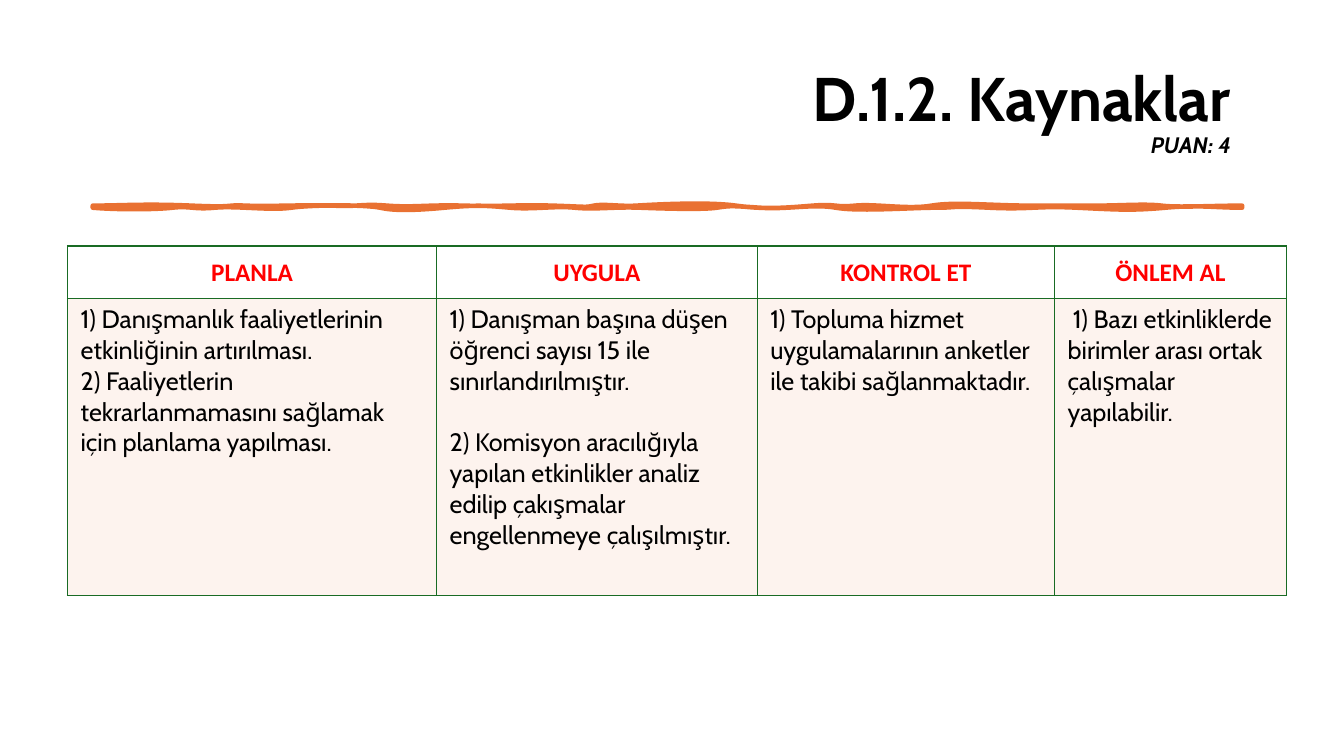
from lxml import etree
from pptx import Presentation
from pptx.dml.color import RGBColor
from pptx.enum.text import MSO_ANCHOR, MSO_AUTO_SIZE, PP_ALIGN
from pptx.oxml.ns import qn
from pptx.util import Inches, Pt

RIGHT, CENTER, LEFT = PP_ALIGN.RIGHT, PP_ALIGN.CENTER, PP_ALIGN.LEFT
MIDDLE, TOP = MSO_ANCHOR.MIDDLE, MSO_ANCHOR.TOP
NO_AUTOFIT = MSO_AUTO_SIZE.NONE
TITLE_ONLY = 5

BLACK, RED, GREEN, ORANGE, PEACH = "000000", "FF0000", "196B24", "E97132", "F6C6AD"
PEACH_OPACITY = 20

TITLE, SCORE = "D.1.2. Kaynaklar", "PUAN: 4"

# Heading, column width, paragraphs, space between paragraphs (pt), first-line indent (in)
COLUMNS = [
    ("PLANLA", 3.66, [
        "1) Danışmanlık faaliyetlerinin etkinliğinin artırılması.",
        "2) Faaliyetlerin tekrarlanmamasını sağlamak için planlama yapılması.",
    ], 0, 0),
    ("UYGULA", 3.18, [
        "1) Danışman başına düşen öğrenci sayısı 15 ile sınırlandırılmıştır.",
        "2) Komisyon aracılığıyla yapılan etkinlikler analiz edilip çakışmalar "
        "engellenmeye çalışılmıştır.",
    ], 22, 0),
    ("KONTROL ET", 2.95, [
        "1) Topluma hizmet uygulamalarının anketler ile takibi sağlanmaktadır.",
    ], 0, 0),
    ("ÖNLEM AL", 2.3, [
        "1) Bazı etkinliklerde birimler arası ortak çalışmalar yapılabilir.",
    ], 0, 0.05),
]
ROW_HEIGHTS = [0.52, 2.95]

# Brush stroke edges: two control points and an end x per curve
STROKE_LEFT, STROKE_RIGHT, UPPER_Y, LOWER_Y = 0.92, 12.32, 2.04, 2.06
UPPER_EDGE = [
    (1.19, 2.04, 1.44, 2.02, 1.9), (2.37, 2.06, 2.2, 2.03, 2.44),
    (2.67, 2.05, 3.03, 2.03, 3.31), (3.6, 2.05, 3.59, 2.02, 3.84),
    (4.1, 2.06, 4.23, 2.03, 4.6), (4.98, 2.05, 5.14, 2.03, 5.48),
    (5.81, 2.05, 5.81, 2.06, 5.89), (5.98, 2.02, 6.15, 2.05, 6.31),
    (6.47, 2.03, 7.01, 2.0, 7.3), (7.59, 2.08, 7.81, 2.06, 8.06),
    (8.31, 2.02, 8.27, 2.06, 8.48), (8.68, 2.02, 9.01, 2.08, 9.24),
    (9.47, 2.0, 9.82, 2.04, 10.23), (10.63, 2.04, 10.63, 2.04, 10.87),
    (11.12, 2.04, 11.36, 2.02, 11.52), (11.68, 2.06, 12.03, 2.04, STROKE_RIGHT),
]
RIGHT_END = (STROKE_RIGHT, 2.05, STROKE_RIGHT, 2.05, STROKE_RIGHT)
LOWER_EDGE = [
    (12.05, 2.06, 11.89, 2.03, 11.56), (11.22, 2.09, 11.1, 2.08, 10.68),
    (10.27, 2.04, 10.23, 2.08, 9.81), (9.39, 2.04, 9.52, 2.06, 9.28),
    (9.04, 2.06, 8.51, 2.1, 8.29), (8.06, 2.02, 7.82, 2.08, 7.53),
    (7.24, 2.04, 7.25, 2.04, 7.11), (6.98, 2.08, 6.61, 2.07, 6.35),
    (6.09, 2.05, 5.9, 2.08, 5.7), (5.51, 2.04, 5.28, 2.08, 5.06),
    (4.83, 2.04, 4.73, 2.03, 4.41), (4.09, 2.09, 3.9, 2.09, 3.77),
    (3.63, 2.03, 3.1, 2.03, 2.89), (2.68, 2.09, 2.35, 2.04, 2.13),
    (1.92, 2.08, 1.89, 2.04, 1.71), (1.54, 2.08, 1.14, 2.08, STROKE_LEFT),
]


def color(hex_string):
    return RGBColor.from_string(hex_string)


def add_run(paragraph, text, size, font_name, hex_color, bold=False, italic=False):
    run = paragraph.add_run()
    run.text = text
    font = run.font
    font.size, font.name, font.bold, font.italic = Pt(size), font_name, bold, italic
    font.color.rgb = color(hex_color)


def bend_segments(shape, curves):
    """Turn each straight segment of the outline into the matching Bezier curve."""
    segments = list(shape._element.iter(qn("a:lnTo")))
    for segment, (x1, y1, x2, y2, _) in zip(segments, curves):
        segment.tag = qn("a:cubicBezTo")
        for index, (x, y) in enumerate([(x1, y1), (x2, y2)]):
            control = etree.Element(qn("a:pt"), x=str(Inches(x) - shape.left),
                                    y=str(Inches(y) - shape.top))
            segment.insert(index, control)


def add_brush_stroke(slide):
    curves = UPPER_EDGE + [RIGHT_END] + LOWER_EDGE
    heights = [UPPER_Y] * len(UPPER_EDGE) + [LOWER_Y] * (len(LOWER_EDGE) + 1)
    builder = slide.shapes.build_freeform(Inches(STROKE_LEFT), Inches(UPPER_Y))
    builder.add_line_segments(
        [(Inches(curve[-1]), Inches(y)) for curve, y in zip(curves, heights)], close=True)
    stroke = builder.convert_to_shape()
    bend_segments(stroke, curves)
    stroke.shadow.inherit = False
    stroke.fill.solid()
    stroke.fill.fore_color.rgb = color(ORANGE)
    stroke.line.color.rgb = color(ORANGE)
    stroke.line.width = Pt(3.25)


def format_cell(cell, anchor, margin_x, margin_y):
    cell.vertical_anchor = anchor
    cell.margin_left = cell.margin_right = Inches(margin_x)
    cell.margin_top = cell.margin_bottom = Inches(margin_y)
    properties = cell._tc.get_or_add_tcPr()
    for side in ("lnL", "lnR", "lnT", "lnB"):
        border = etree.SubElement(properties, qn(f"a:{side}"), w=str(Pt(1)))
        fill = etree.SubElement(border, qn("a:solidFill"))
        etree.SubElement(fill, qn("a:srgbClr"), val=GREEN)


def fill_peach(cell):
    cell.fill.solid()
    cell.fill.fore_color.rgb = color(PEACH)
    fill_color = cell._tc.tcPr.find(qn("a:solidFill")).find(qn("a:srgbClr"))
    etree.SubElement(fill_color, qn("a:alpha"), val=str(PEACH_OPACITY * 1000))


def add_plan_table(slide):
    widths = [column[1] for column in COLUMNS]
    table = slide.shapes.add_table(
        len(ROW_HEIGHTS), len(COLUMNS), Inches(0.67), Inches(2.44),
        Inches(sum(widths)), Inches(sum(ROW_HEIGHTS))).table
    table.first_row = table.horz_banding = False
    for row, height in zip(table.rows, ROW_HEIGHTS):
        row.height = Inches(height)

    for index, (heading, width, texts, gap, indent) in enumerate(COLUMNS):
        table.columns[index].width = Inches(width)

        header = table.cell(0, index)
        format_cell(header, MIDDLE, 0.05, 0)
        header.fill.background()
        paragraph = header.text_frame.paragraphs[0]
        paragraph.alignment = CENTER
        paragraph.line_spacing, paragraph.space_after = 1.07, Pt(8)
        add_run(paragraph, heading, 18, "Calibri", RED, bold=True)

        body = table.cell(1, index)
        format_cell(body, TOP, 0.13, 0.06)
        fill_peach(body)
        frame = body.text_frame
        for number, text in enumerate(texts):
            paragraph = frame.add_paragraph() if number else frame.paragraphs[0]
            paragraph.alignment = LEFT
            if number:
                paragraph.space_before = Pt(gap)
            if indent:
                paragraph._p.get_or_add_pPr().set("indent", str(Inches(indent)))
            add_run(paragraph, text, 18, "Cabin", BLACK)


def add_title(slide):
    title = slide.shapes.title
    title.left, title.top = Inches(0.35), Inches(0.4)
    title.width, title.height = Inches(11.96), Inches(1.45)
    frame = title.text_frame
    frame.auto_size, frame.word_wrap, frame.vertical_anchor = NO_AUTOFIT, True, MIDDLE
    paragraph = frame.paragraphs[0]
    paragraph.alignment, paragraph.line_spacing = RIGHT, 0.9
    add_run(paragraph, TITLE, 44, "Cabin", BLACK, bold=True)
    paragraph.add_line_break()
    add_run(paragraph, SCORE, 16, "Cabin", BLACK, bold=True, italic=True)


def main():
    presentation = Presentation()
    presentation.slide_width, presentation.slide_height = Inches(13.33), Inches(7.5)
    slide = presentation.slides.add_slide(presentation.slide_layouts[TITLE_ONLY])
    add_title(slide)
    add_brush_stroke(slide)
    add_plan_table(slide)
    presentation.save("out.pptx")


if __name__ == "__main__":
    main()
